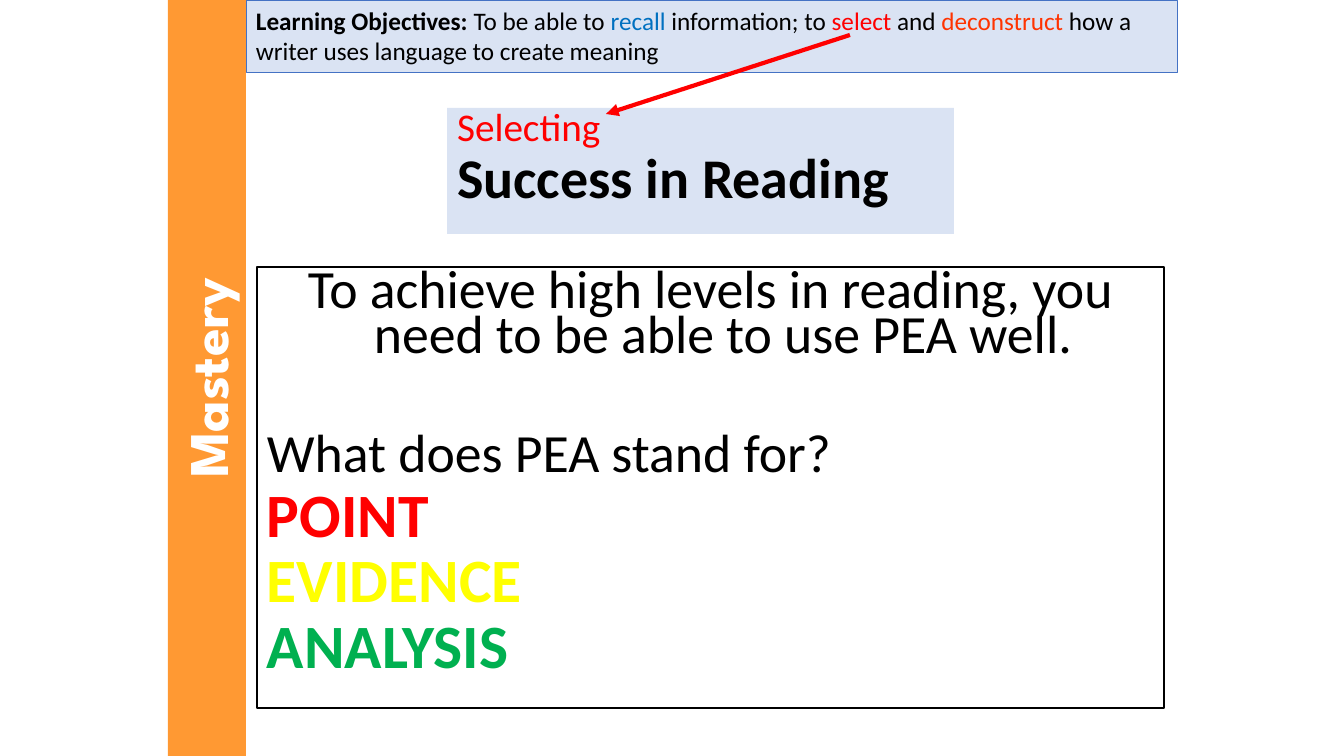
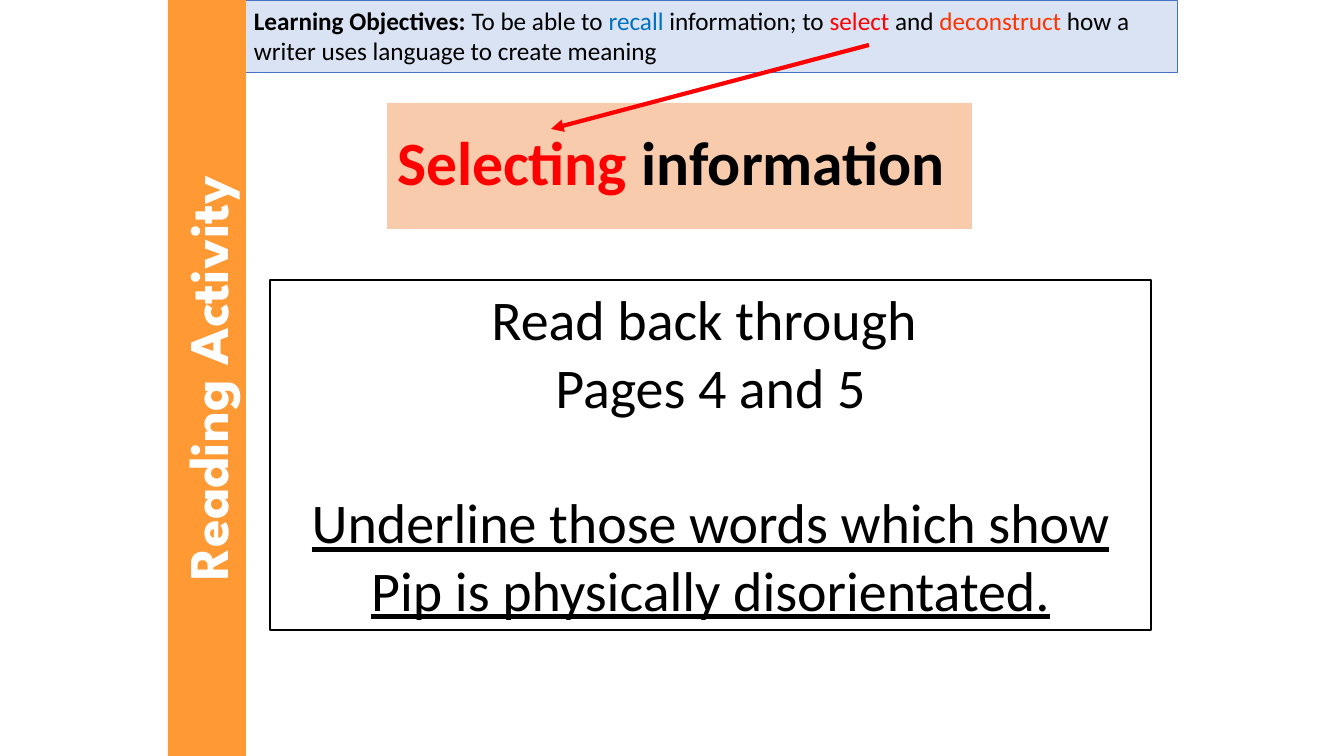
from dataclasses import dataclass

from lxml.etree import SubElement
from pptx import Presentation
from pptx.dml.color import RGBColor
from pptx.enum.shapes import MSO_CONNECTOR, MSO_SHAPE
from pptx.enum.text import MSO_ANCHOR, MSO_AUTO_SIZE, PP_ALIGN
from pptx.oxml.ns import qn
from pptx.util import Pt

EMU_PER_PX = 914400 / 100.8
SLIDE_WIDTH, SLIDE_HEIGHT = 1344, 756
TITLE_ONLY = 5

BLACK = RGBColor(0x00, 0x00, 0x00)
WHITE = RGBColor(0xFF, 0xFF, 0xFF)
RED = RGBColor(0xFF, 0x00, 0x00)
YELLOW = RGBColor(0xFF, 0xFF, 0x00)
GREEN = RGBColor(0x00, 0xB0, 0x50)
BLUE = RGBColor(0x00, 0x70, 0xC0)
VERMILION = RGBColor(0xFF, 0x33, 0x00)
ORANGE = RGBColor(0xFF, 0x99, 0x33)
PALE_BLUE = RGBColor(0xDA, 0xE3, 0xF3)
PEACH = RGBColor(0xF8, 0xCB, 0xAD)
BORDER_BLUE = RGBColor(0x44, 0x72, 0xC4)

BODY_FONT = "Calibri"
SIDEBAR_FONT = "League Spartan"
SIDEBAR_BOX = (168, 0, 78, SLIDE_HEIGHT)


@dataclass
class Words:
    text: str
    color: RGBColor = BLACK
    bold: bool = False
    underline: bool = False


@dataclass
class Line:
    words: list
    size: float
    align: PP_ALIGN = PP_ALIGN.LEFT
    spacing: float = 1.0
    before: int = 0
    hanging: int = 0


OBJECTIVES = Line([
    Words("Learning Objectives: ", bold=True),
    Words("To be able to "),
    Words("recall ", BLUE),
    Words("information; to "),
    Words("select ", RED),
    Words("and "),
    Words("deconstruct ", VERMILION),
    Words("how a writer uses language to create meaning"),
], 18)


def px(value):
    return round(value * EMU_PER_PX)


def write_lines(text_frame, lines, font=BODY_FONT):
    text_frame.word_wrap = True
    text_frame.auto_size = MSO_AUTO_SIZE.NONE
    for index, line in enumerate(lines):
        paragraph = text_frame.paragraphs[0] if index == 0 else text_frame.add_paragraph()
        paragraph.alignment = line.align
        paragraph.line_spacing = line.spacing
        paragraph.space_before = Pt(line.before)
        if line.hanging:
            properties = paragraph._p.get_or_add_pPr()
            properties.set("marL", str(px(line.hanging)))
            properties.set("indent", str(px(-line.hanging)))
        for words in line.words:
            run = paragraph.add_run()
            run.text = words.text
            run.font.name = font
            run.font.size = Pt(line.size)
            run.font.bold = words.bold
            run.font.underline = words.underline
            run.font.color.rgb = words.color


def add_panel(slide, box, fill, lines, border=None, border_width=1, font=BODY_FONT):
    shape = slide.shapes.add_shape(MSO_SHAPE.RECTANGLE, *map(px, box))
    shape.shadow.inherit = False
    shape.fill.solid()
    shape.fill.fore_color.rgb = fill
    if border is None:
        shape.line.fill.background()
    else:
        shape.line.color.rgb = border
        shape.line.width = Pt(border_width)
    shape.text_frame.vertical_anchor = MSO_ANCHOR.TOP
    write_lines(shape.text_frame, lines, font)
    return shape


def set_title(slide, box, fill, lines, anchor):
    title = slide.shapes.title
    title.left, title.top, title.width, title.height = map(px, box)
    title.fill.solid()
    title.fill.fore_color.rgb = fill
    title.text_frame.vertical_anchor = anchor
    if anchor == MSO_ANCHOR.TOP:
        title.text_frame.margin_top = 0
    write_lines(title.text_frame, lines)


def add_objectives(slide, left):
    add_panel(slide, (left, 0, 1177 - left, 72), PALE_BLUE, [OBJECTIVES], BORDER_BLUE, 0.5)


def add_arrow(slide, start, end):
    arrow = slide.shapes.add_connector(MSO_CONNECTOR.STRAIGHT, *map(px, (*start, *end)))
    arrow.line.color.rgb = RED
    arrow.line.width = Pt(3)
    SubElement(arrow.line._get_or_add_ln(), qn("a:tailEnd"), type="triangle")
    SubElement(arrow._element.spPr, qn("a:effectLst"))


def add_sidebar(slide, box, label):
    # The band is laid out flat, then turned about its centre
    left, top, width, height = box
    shift = (height - width) // 2
    line = Line([Words(label, WHITE, bold=True)], 40, PP_ALIGN.CENTER)
    band = add_panel(slide, (left - shift, top + shift, height, width), ORANGE, [line],
                     font=SIDEBAR_FONT)
    band.rotation = 270


def add_lesson_slide(presentation, title, body_box, body, objectives_left, arrow, label):
    slide = presentation.slides.add_slide(presentation.slide_layouts[TITLE_ONLY])
    set_title(slide, *title)
    add_panel(slide, body_box, WHITE, body, BLACK)
    add_objectives(slide, objectives_left)
    add_arrow(slide, *arrow)
    add_sidebar(slide, SIDEBAR_BOX, label)


def add_mastery_slide(presentation):
    heading = [
        Line([Words("Selecting", RED)], 28, spacing=0.9),
        Line([Words("Success in Reading", bold=True)], 40, spacing=0.9),
    ]
    body = [
        Line([Words("To achieve high levels in reading, you need to be able to use PEA well.")],
             38.4, PP_ALIGN.CENTER, 0.7, hanging=25),
        Line([Words("What does PEA stand for?")], 38.4, spacing=0.7, before=53),
    ]
    for word, color in (("POINT", RED), ("EVIDENCE", YELLOW), ("ANALYSIS", GREEN)):
        body.append(Line([Words(word, color, bold=True)], 44, spacing=0.7, before=10))
    add_lesson_slide(
        presentation, ((447, 108, 507, 126), PALE_BLUE, heading, MSO_ANCHOR.TOP),
        (257, 267, 907, 441), body, 246, ((850, 35), (606, 114)), "Mastery")


def add_activity_slide(presentation):
    heading = [Line([Words("Selecting ", RED, bold=True), Words("information", bold=True)],
                    44, spacing=0.9)]
    body = [
        Line([Words("Read back through ")], 40, PP_ALIGN.CENTER),
        Line([Words("Pages 4 and 5")], 40, PP_ALIGN.CENTER),
        Line([Words("Underline those words which show Pip is physically disorientated.",
                    underline=True)], 40, PP_ALIGN.CENTER, before=49),
    ]
    add_lesson_slide(
        presentation, ((387, 103, 585, 126), PEACH, heading, MSO_ANCHOR.MIDDLE),
        (270, 280, 881, 350), body, 244, ((869, 45), (551, 129)), "Reading Activity")


def main():
    presentation = Presentation()
    presentation.slide_width = px(SLIDE_WIDTH)
    presentation.slide_height = px(SLIDE_HEIGHT)
    add_mastery_slide(presentation)
    add_activity_slide(presentation)
    presentation.save("out.pptx")


if __name__ == "__main__":
    main()
